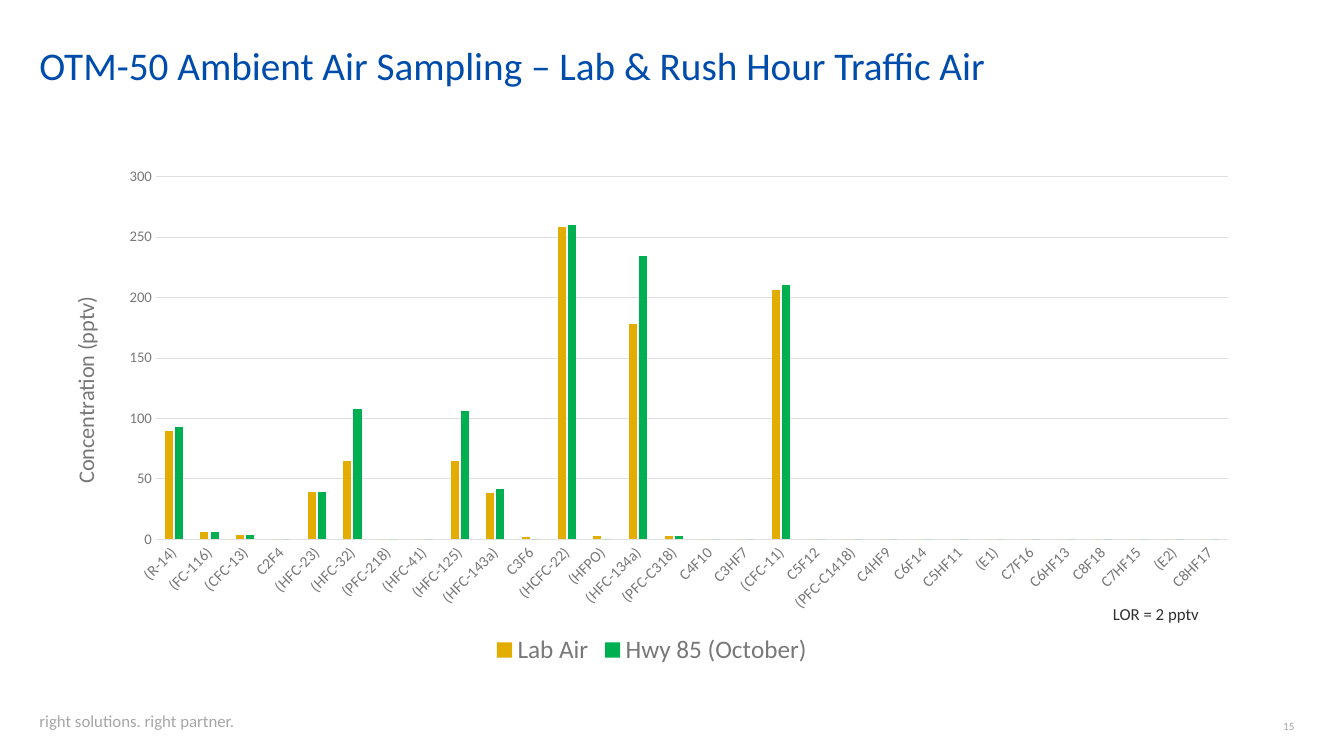
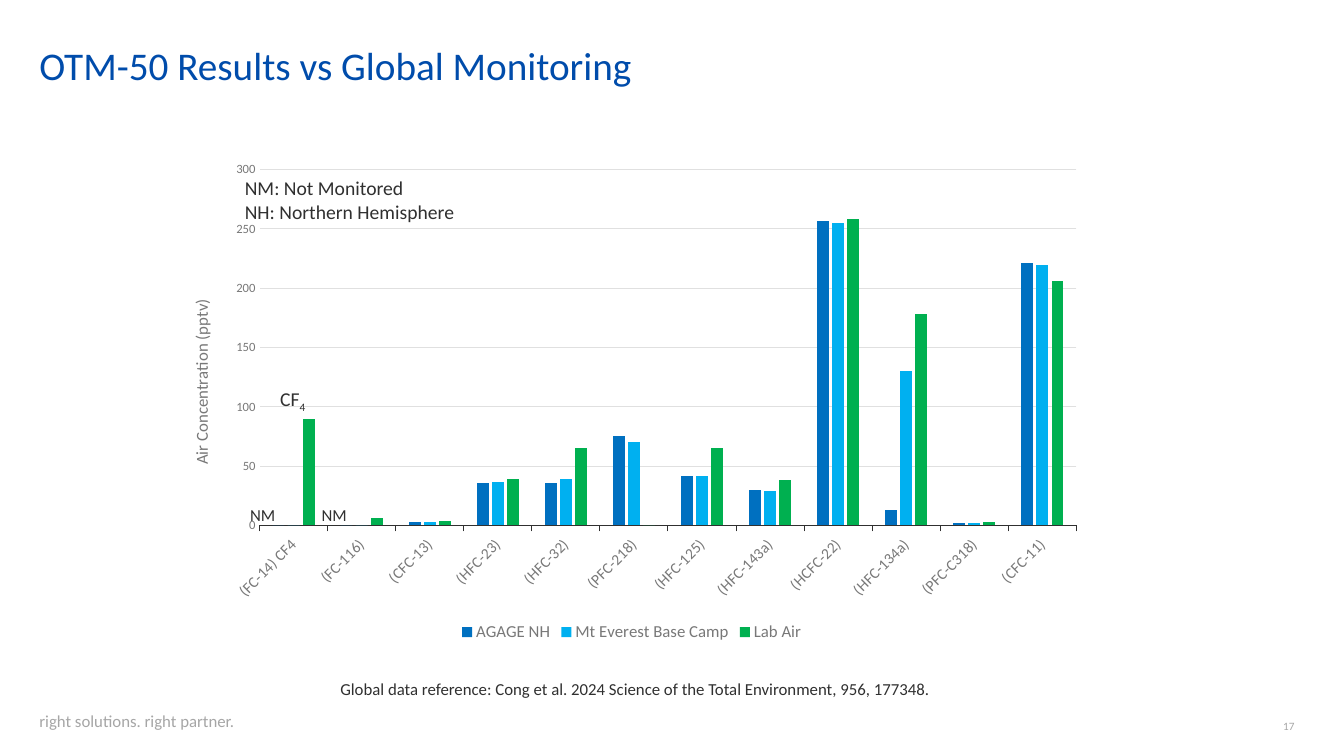
from dataclasses import dataclass

from lxml.etree import SubElement
from pptx import Presentation
from pptx.chart.data import CategoryChartData
from pptx.dml.color import RGBColor
from pptx.enum.chart import XL_CHART_TYPE, XL_LEGEND_POSITION, XL_TICK_MARK
from pptx.enum.text import MSO_ANCHOR, MSO_AUTO_SIZE, PP_ALIGN
from pptx.oxml.ns import qn
from pptx.util import Inches, Pt

FONT = "Calibri"
BLUE, DARK, MUTED, PALE, GRID = "004CAB", "303030", "787878", "A6A6A6", "E0E0E0"
GREEN = "00B050"
WIDTH, HEIGHT = Inches(13.33), Inches(7.5)
COLUMN, ROW = WIDTH / 100, HEIGHT / 100
TITLE_ONLY = 5


@dataclass
class Area:
    """Place on a grid of 100 columns by 100 rows."""
    column: float
    row: float
    columns: float = 0
    rows: float = 0

    def box(self) -> tuple[int, int, int, int]:
        return (round(self.column * COLUMN), round(self.row * ROW),
                round(self.columns * COLUMN), round(self.rows * ROW))

    def shares_of(self, outer: "Area") -> dict[str, float]:
        """Place and size as shares of the outer area."""
        shares = {"x": (self.column - outer.column) / outer.columns,
                  "y": (self.row - outer.row) / outer.rows}
        if self.columns:
            shares |= {"w": self.columns / outer.columns, "h": self.rows / outer.rows}
        return shares


@dataclass
class Run:
    text: str
    subscript: bool = False


@dataclass
class Label:
    area: Area
    lines: list[list[Run]]
    size: float = 12
    color: str = DARK
    align: PP_ALIGN = PP_ALIGN.CENTER
    insets: tuple[float, float] = (0.1, 0.05)
    anchor: MSO_ANCHOR = MSO_ANCHOR.TOP


@dataclass
class Series:
    name: str
    color: str
    values: list[int]


@dataclass
class ColumnChart:
    area: Area
    plot_area: Area
    axis_title_area: Area
    categories: list[str]
    series: list[Series]
    axis_title: str
    axis_title_size: float
    value_size: float
    legend_size: float
    axis_color: str
    tick: XL_TICK_MARK


@dataclass
class ChartSlide:
    title: str
    number: int
    chart: ColumnChart
    labels: list[Label]


TITLE_AREA = Area(2.93, 3.73, 87.1, 10.53)
TAGLINE = Label(Area(2.93, 94, 17.7, 2.67), [[Run("right solutions. right partner.")]],
                color=PALE, align=PP_ALIGN.LEFT, insets=(0, 0))


def rgb(color: str) -> RGBColor:
    return RGBColor.from_string(color)


def style_font(font, size: float, color: str) -> None:
    font.name, font.size, font.bold = FONT, Pt(size), False
    font.color.rgb = rgb(color)


def style_line(line, color: str) -> None:
    line.width = Pt(0.75)
    line.color.rgb = rgb(color)


def set_insets(frame, side: float, end: float) -> None:
    frame.margin_left = frame.margin_right = Inches(side)
    frame.margin_top = frame.margin_bottom = Inches(end)


def add_run(paragraph, content: Run, size: float, color: str) -> None:
    run = paragraph.add_run()
    run.text = content.text
    style_font(run.font, size, color)
    if content.subscript:
        run.font._element.set("baseline", "-25000")


def add_label(slide, label: Label) -> None:
    frame = slide.shapes.add_textbox(*label.area.box()).text_frame
    frame.word_wrap = True
    frame.vertical_anchor = label.anchor
    set_insets(frame, *label.insets)
    for index, line in enumerate(label.lines):
        paragraph = frame.add_paragraph() if index else frame.paragraphs[0]
        paragraph.alignment = label.align
        for content in line:
            add_run(paragraph, content, label.size, label.color)


def place_manually(parent, position: int, shares: dict[str, float], inner: bool) -> None:
    """Give a chart part a fixed place, in shares of the chart."""
    for old in parent.findall(qn("c:layout")):
        parent.remove(old)
    layout = SubElement(parent, qn("c:layout"))
    parent.insert(position, layout)
    manual = SubElement(layout, qn("c:manualLayout"))
    settings = {"layoutTarget": "inner"} if inner else {}
    settings |= {"xMode": "edge", "yMode": "edge"} | shares
    for name, value in settings.items():
        SubElement(manual, qn(f"c:{name}")).set("val", str(value))


def style_axes(chart, design: ColumnChart) -> None:
    category_axis, value_axis = chart.category_axis, chart.value_axis
    category_axis.major_tick_mark = design.tick
    style_line(category_axis.format.line, design.axis_color)
    style_font(category_axis.tick_labels.font, 11, MUTED)
    chart.element.xpath(".//c:catAx/c:txPr/a:bodyPr")[0].set("rot", "-2700000")

    value_axis.minimum_scale, value_axis.maximum_scale, value_axis.major_unit = 0, 300, 50
    value_axis.major_tick_mark = XL_TICK_MARK.NONE
    value_axis.format.line.fill.background()
    style_line(value_axis.major_gridlines.format.line, GRID)
    style_font(value_axis.tick_labels.font, design.value_size, MUTED)
    value_axis.has_title = True
    frame = value_axis.axis_title.text_frame
    add_run(frame.paragraphs[0], Run(design.axis_title), design.axis_title_size, MUTED)
    body = chart.element.xpath(".//c:valAx/c:title/c:tx/c:rich/a:bodyPr")[0]
    body.set("rot", "-5400000")
    body.set("vert", "horz")


def add_column_chart(slide, design: ColumnChart) -> None:
    data = CategoryChartData(number_format="0")
    data.categories = design.categories
    for series in design.series:
        data.add_series(series.name, series.values)
    chart = slide.shapes.add_chart(
        XL_CHART_TYPE.COLUMN_CLUSTERED, *design.area.box(), data).chart
    chart.has_title = False
    style_font(chart.font, 10, DARK)
    chart.has_legend = True
    chart.legend.position = XL_LEGEND_POSITION.BOTTOM
    chart.legend.include_in_layout = False
    style_font(chart.legend.font, design.legend_size, MUTED)

    plot = chart.plots[0]
    plot.gap_width, plot.overlap, plot.vary_by_categories = 219, -27, False
    for drawn, series in zip(plot.series, design.series):
        drawn.format.fill.solid()
        drawn.format.fill.fore_color.rgb = rgb(series.color)
    style_axes(chart, design)
    place_manually(chart.element.xpath(".//c:plotArea")[0], 0,
                   design.plot_area.shares_of(design.area), True)
    place_manually(chart.element.xpath(".//c:valAx/c:title")[0], 1,
                   design.axis_title_area.shares_of(design.area), False)


def add_title(slide, text: str) -> None:
    title = slide.shapes.title
    title.left, title.top, title.width, title.height = TITLE_AREA.box()
    frame = title.text_frame
    frame.auto_size = MSO_AUTO_SIZE.NONE
    frame.word_wrap = True
    frame.vertical_anchor = MSO_ANCHOR.MIDDLE
    set_insets(frame, 0, 0)
    paragraph = frame.paragraphs[0]
    paragraph.alignment, paragraph.line_spacing = PP_ALIGN.LEFT, 0.9
    add_run(paragraph, Run(text), 28, BLUE)


def page_number(number: int) -> Label:
    return Label(Area(93.17, 94.93, 3.15, 2.13), [[Run(str(number))]], 8, PALE,
                 PP_ALIGN.RIGHT, (0, 0.05), MSO_ANCHOR.MIDDLE)


def add_chart_slide(presentation, content: ChartSlide) -> None:
    slide = presentation.slides.add_slide(presentation.slide_layouts[TITLE_ONLY])
    add_title(slide, content.title)
    add_column_chart(slide, content.chart)
    for label in [TAGLINE, page_number(content.number), *content.labels]:
        add_label(slide, label)


def padded(values: list[int], count: int) -> list[int]:
    """Fill up with zeros for the compounds not found."""
    return values + [0] * (count - len(values))


COMPOUNDS = [
    "(R-14)", "(FC-116)", "(CFC-13)", "C2F4", "(HFC-23)", "(HFC-32)", "(PFC-218)",
    "(HFC-41)", "(HFC-125)", "(HFC-143a)", "C3F6", "(HCFC-22)", "(HFPO)", "(HFC-134a)",
    "(PFC-C318)", "C4F10", "C3HF7", "(CFC-11)", "C5F12", "(PFC-C1418)", "C4HF9", "C6F14",
    "C5HF11", "(E1)", "C7F16", "C6HF13", "C8F18", "C7HF15", "(E2)", "C8HF17"]
LAB_AIR = [90, 6, 4, 0, 39, 65, 0, 0, 65, 38, 2, 258, 3, 178, 3, 0, 0, 206]
HIGHWAY_AIR = [93, 6, 4, 0, 39, 108, 0, 0, 106, 42, 0, 260, 0, 234, 3, 0, 0, 210]

SAMPLING = ChartSlide(
    "OTM-50 Ambient Air Sampling – Lab & Rush Hour Traffic Air", 15,
    ColumnChart(
        Area(3.75, 20.8, 89.5, 67.87), Area(11.6, 23.37, 79.76, 48), Area(4.95, 38.73),
        COMPOUNDS,
        [Series("Lab Air", "E2AC00", padded(LAB_AIR, len(COMPOUNDS))),
         Series("Hwy 85 (October)", GREEN, padded(HIGHWAY_AIR, len(COMPOUNDS)))],
        "Concentration (pptv)", axis_title_size=16, value_size=10.5, legend_size=18,
        axis_color=GRID, tick=XL_TICK_MARK.NONE),
    [Label(Area(82.07, 79.2, 10.58, 4), [[Run("LOR = 2 pptv")]], align=PP_ALIGN.LEFT)])

MONITORING = ChartSlide(
    "OTM-50 Results vs Global Monitoring", 17,
    ColumnChart(
        Area(12.53, 20.27, 68.94, 65.2), Area(19.31, 22.46, 60.79, 47.06),
        Area(13.91, 39.18),
        ["(FC-14) CF4", "(FC-116)", "(CFC-13)", "(HFC-23)", "(HFC-32)", "(PFC-218)",
         "(HFC-125)", "(HFC-143a)", "(HCFC-22)", "(HFC-134a)", "(PFC-C318)", "(CFC-11)"],
        [Series("AGAGE NH", "0070C0", [0, 0, 3, 36, 36, 75, 42, 30, 257, 13, 2, 221]),
         Series("Mt Everest Base Camp", "00B0F0",
                [0, 0, 3, 37, 39, 70, 42, 29, 255, 130, 2, 220]),
         Series("Lab Air", GREEN, [90, 6, 4, 39, 65, 0, 65, 38, 258, 178, 3, 206])],
        "Air Concentration (pptv)", axis_title_size=12, value_size=9, legend_size=12,
        axis_color=DARK, tick=XL_TICK_MARK.OUTSIDE),
    [Label(Area(17.48, 22.67, 19.28, 7.6),
           [[Run("NM: Not Monitored")], [Run("NH: Northern Hemisphere")]], 14,
           align=PP_ALIGN.LEFT),
     *[Label(Area(column, 66.13, 3.98, 4), [[Run("NM")]]) for column in (17.55, 22.88)],
     Label(Area(19.5, 50.53, 4.58, 4.53), [[Run("CF"), Run("4", subscript=True)]], 14),
     Label(Area(21.16, 89.07, 52.21, 4),
           [[Run("Global data reference: Cong et al. 2024 Science of the "
                 "Total Environment, 956, 177348.")]])])


def main() -> None:
    presentation = Presentation()
    presentation.slide_width, presentation.slide_height = WIDTH, HEIGHT
    for content in (SAMPLING, MONITORING):
        add_chart_slide(presentation, content)
    presentation.save("out.pptx")


if __name__ == "__main__":
    main()
